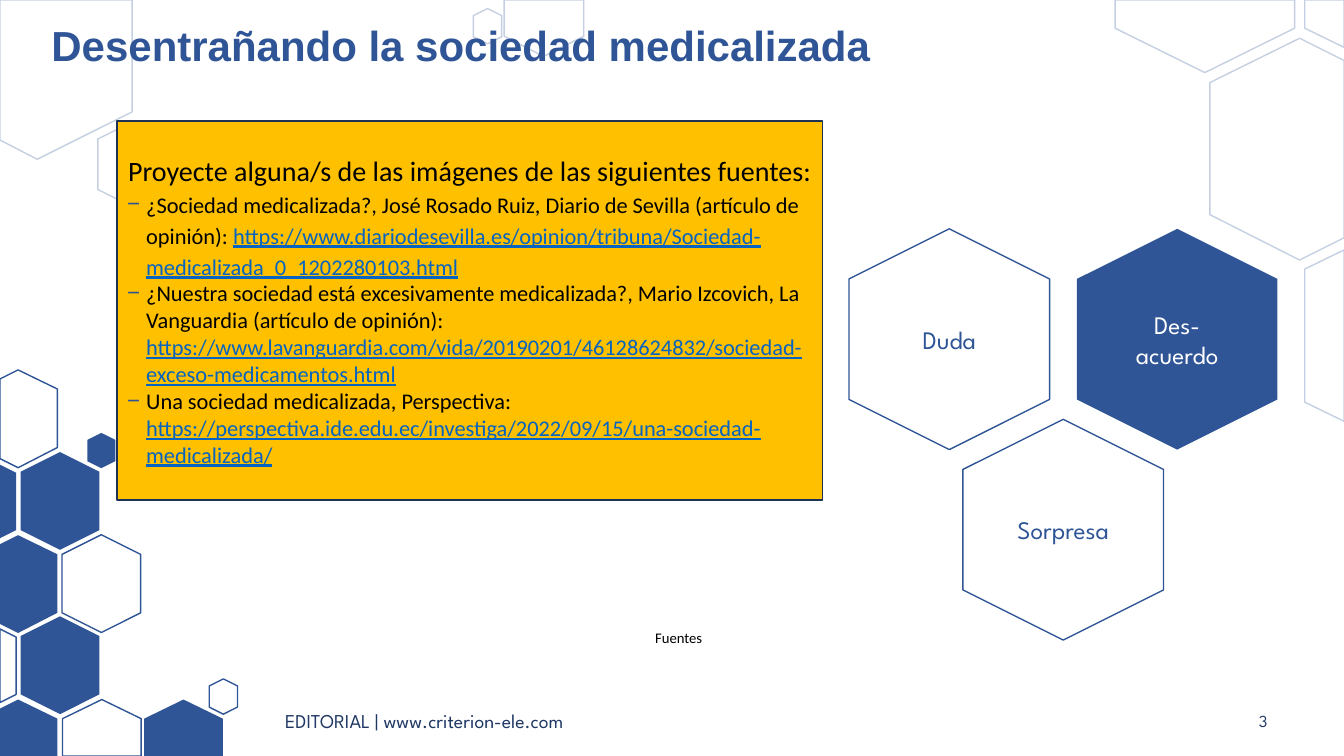
"""Builds the slide on the medicalised society."""
from lxml.etree import SubElement
from pptx import Presentation
from pptx.dml.color import RGBColor as Color
from pptx.enum.shapes import MSO_SHAPE as Shape
from pptx.enum.text import MSO_ANCHOR as Anchor, MSO_AUTO_SIZE as AutoSize, PP_ALIGN as Align
from pptx.oxml.ns import qn
from pptx.util import Pt

SCALE = 9144
COLOURS = {
    "blue": "2F5597", "navy": "203864", "edge": "1E3256", "amber": "FFC000",
    "link": "0563C1", "bullet": "2F5496", "black": "000000", "white": "FFFFFF",
}
LOOKS = {
    "faint": ("white", "blue", 28000),
    "outline": ("white", "blue", None),
    "solid": ("blue", None, None),
    "open": (None, "blue", None),
    "panel": ("amber", "edge", None),
}
TOP_CELLS = [
    [(500, 0), (579, 0), (579, 36), (539, 56), (500, 36)],
    [(1106, 0), (1284, 0), (1284, 28), (1195, 72), (1106, 28)],
    [(1294, 0), (1333, 0), (1333, 47), (1294, 28)],
    [(1289, 38), (1333, 60), (1333, 236), (1289, 258), (1200, 213), (1200, 82)],
    [(0, 0), (131, 0), (131, 111), (37, 158), (0, 139)],
    [(1333, 248), (1333, 418), (1294, 399), (1294, 267)],
]
LEFT_CELLS = [(367, "outline"), (531, "solid")]
LEFT_SLIVERS = [(461, "solid"), (624, "outline")]
BOTTOM_CELLS = [(62, "outline"), (143, "solid")]
HEXAGONS = [
    (466, 12, 35, 28, "faint"), (89, 129, 84, 68, "faint"),
    (11, 458, 97, 78, "solid"), (52, 540, 97, 78, "outline"),
    (11, 621, 97, 78, "solid"), (204, 677, 35, 28, "outline"),
    (83, 433, 35, 28, "solid"),
]
REACTIONS = [
    ("Duda", 832, 237, "open", "blue"),
    ("Sorpresa", 945, 426, "open", "blue"),
    ("Des-acuerdo", 1058, 237, "solid", "white"),
]
HEADING = "Proyecte alguna/s de las imágenes de las siguientes fuentes:"
SOURCES = [
    ("¿Sociedad medicalizada?, José Rosado Ruiz, Diario de Sevilla (artículo de opinión): ",
     "https://www.diariodesevilla.es/opinion/tribuna/Sociedad-medicalizada_0_1202280103.html", 1.15),
    ("¿Nuestra sociedad está excesivamente medicalizada?, Mario Izcovich, "
     "La Vanguardia (artículo de opinión): ",
     "https://www.lavanguardia.com/vida/20190201/46128624832/sociedad-exceso-medicamentos.html", 1.0),
    ("Una sociedad medicalizada, Perspectiva: ",
     "https://perspectiva.ide.edu.ec/investiga/2022/09/15/una-sociedad-medicalizada/", 1.0),
]


class Slide:
    """Holds the style and the current slide."""

    def __init__(self, page):
        self.page = page
        self.shapes = page.shapes

    def colour(self, name):
        return Color.from_string(COLOURS[name])

    def paint(self, shape, look):
        fill, line, alpha = LOOKS[look]
        if fill:
            shape.fill.solid()
            shape.fill.fore_color.rgb = self.colour(fill)
        else:
            shape.fill.background()
        if line:
            shape.line.color.rgb = self.colour(line)
            shape.line.width = Pt(1)
        else:
            shape.line.fill.background()
        if alpha:
            stroke = next(shape.element.spPr.find(qn("a:ln")).iter(qn("a:srgbClr")))
            SubElement(stroke, qn("a:alpha"), val=str(alpha))
        shape.shadow.inherit = False

    def place(self, shape, left, top, width, height):
        shape.left, shape.top = left * SCALE, top * SCALE
        shape.width, shape.height = width * SCALE, height * SCALE

    def frame(self, shape, anchor=Anchor.MIDDLE):
        frame = shape.text_frame
        frame.word_wrap = True
        frame.auto_size = AutoSize.NONE
        frame.vertical_anchor = anchor
        return frame

    def style(self, para, font, size, colour=None, align=Align.LEFT, spacing=1.0, bold=False):
        para.alignment = align
        para.line_spacing = spacing
        para.space_before = Pt(0)
        para.font.name = font
        para.font.size = Pt(size)
        para.font.bold = bold
        if colour:
            para.font.color.rgb = self.colour(colour)

    def bullet(self, para, indent):
        properties = para._p.get_or_add_pPr()
        properties.set("marL", str(indent * SCALE))
        properties.set("indent", str(-indent * SCALE))
        if indent:
            tint = SubElement(properties, qn("a:buClr"))
            SubElement(tint, qn("a:srgbClr"), val=COLOURS["bullet"])
            SubElement(properties, qn("a:buChar"), char="−")
        else:
            SubElement(properties, qn("a:buNone"))

    def cell(self, points, look):
        builder = self.shapes.build_freeform(*points[0], scale=SCALE)
        builder.add_line_segments(points[1:], close=True)
        self.paint(builder.convert_to_shape(), look)

    def hexagon(self, left, top, width, height, look):
        box = self.shapes.add_shape(
            Shape.HEXAGON, left * SCALE, top * SCALE, width * SCALE, height * SCALE)
        box.rotation = 90
        self.paint(box, look)
        return box

    def reaction(self, text, left, top, look, colour):
        frame = self.frame(self.hexagon(left, top, 219, 199, look))
        frame._txBody.bodyPr.set("vert", "vert270")
        frame.text = text
        self.style(frame.paragraphs[0], "League Spartan", 18, colour, Align.CENTER)

    def label(self, text, place, anchor, *style):
        box = self.shapes.add_textbox(*(length * SCALE for length in place))
        frame = self.frame(box, anchor)
        frame.text = text
        self.style(frame.paragraphs[0], *style)

    def title(self, text):
        box = self.shapes.title
        box.element.getparent().append(box.element)
        self.place(box, 41, 18, 1156, 60)
        frame = self.frame(box)
        frame.text = text
        self.style(frame.paragraphs[0], "Arial", 30, "blue", spacing=0.9, bold=True)

    def source_list(self, heading, sources):
        box = self.page.placeholders[1]
        box.element.getparent().append(box.element)
        self.place(box, 116, 120, 700, 376)
        self.paint(box, "panel")
        frame = self.frame(box)
        frame.text = heading
        first = frame.paragraphs[0]
        self.bullet(first, 0)
        self.style(first, "Calibri", 20, "black", Align.CENTER)
        for citation, address, spacing in sources:
            para = frame.add_paragraph()
            self.bullet(para, 19)
            self.style(para, "Calibri", 16, spacing=spacing)
            for text, colour in ((citation, "black"), (address, "link")):
                span = para.add_run()
                span.text = text
                span.font.color.rgb = self.colour(colour)
                span.font.underline = colour == "link"


def main():
    deck = Presentation()
    deck.slide_width, deck.slide_height = 1333 * SCALE, 750 * SCALE
    slide = Slide(deck.slides.add_slide(deck.slide_layouts[1]))
    for points in TOP_CELLS:
        slide.cell(points, "faint")
    for top, look in LEFT_CELLS:
        slide.cell([(18, top), (57, top + 19), (57, top + 77), (18, top + 97),
                    (0, top + 88), (0, top + 9)], look)
    for top, look in LEFT_SLIVERS:
        slide.cell([(0, top), (16, top + 8), (16, top + 65), (0, top + 73)], look)
    slide.cell([(18, 694), (57, 713), (57, 750), (0, 750), (0, 703)], "solid")
    for left, look in BOTTOM_CELLS:
        slide.cell([(left + 39, 694), (left + 78, 713), (left + 78, 750),
                    (left, 750), (left, 713)], look)
    for hexagon in HEXAGONS:
        slide.hexagon(*hexagon)
    slide.label("EDITORIAL | www.criterion-ele.com", (273, 695, 653, 40), Anchor.MIDDLE,
                "League Spartan", 14, "navy")
    slide.label("3", (1168, 695, 99, 40), Anchor.MIDDLE,
                "League Spartan", 12, "navy", Align.RIGHT)
    slide.title("Desentrañando la sociedad medicalizada")
    for reaction in REACTIONS:
        slide.reaction(*reaction)
    slide.label("Fuentes", (640, 616, 693, 29), Anchor.TOP,
                "Calibri", 10.5, "black", Align.LEFT, 1.15)
    slide.source_list(HEADING, SOURCES)
    deck.save("out.pptx")


if __name__ == "__main__":
    main()
